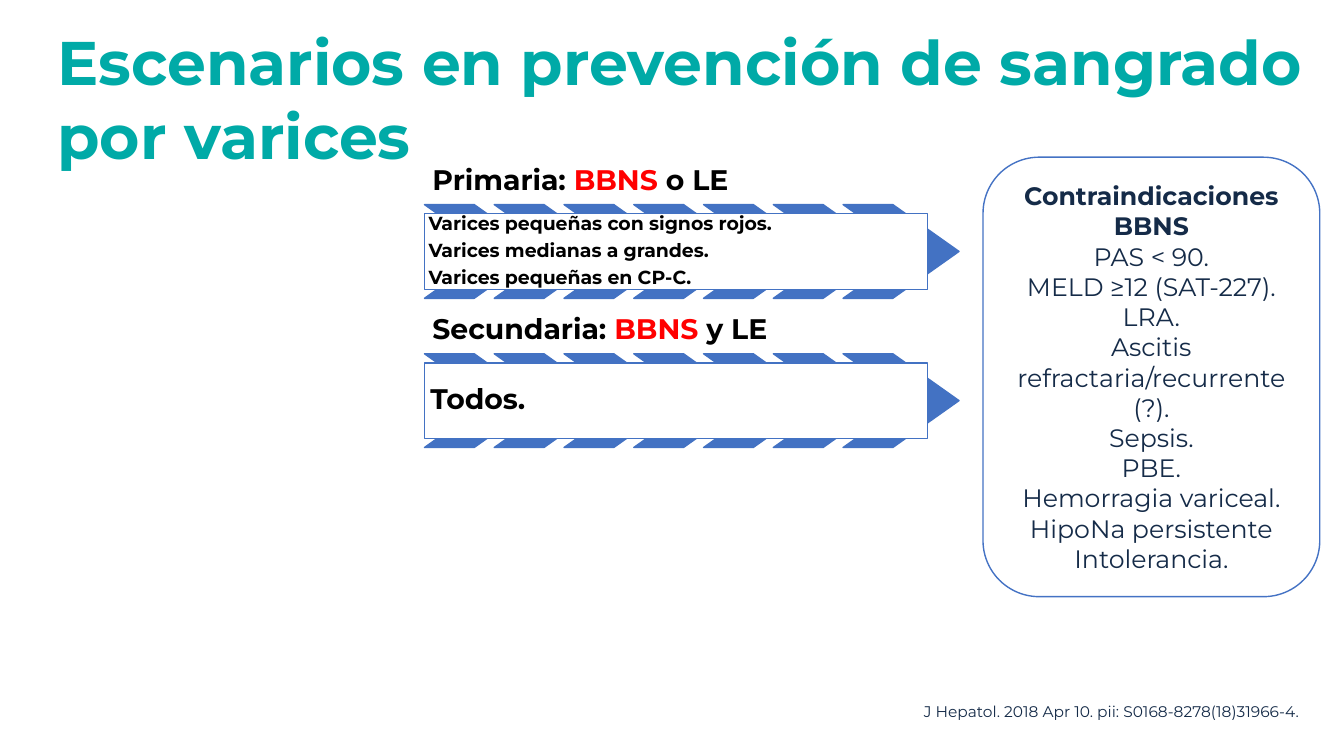
from pptx import Presentation
from pptx.dml.color import RGBColor
from pptx.enum.shapes import MSO_SHAPE
from pptx.enum.text import MSO_ANCHOR, PP_ALIGN
from pptx.util import Inches, Pt

COLORS = {"teal": "00AAA7", "navy": "152B48", "black": "000000", "red": "FF0000",
          "white": "FFFFFF", "arrow": "4372C3", "border": "4472C4"}
FONT = "Montserrat"


def color(name):
    return RGBColor.from_string(COLORS[name])


def write(shape, paras, size, ink="black", bold=False, align=PP_ALIGN.LEFT,
          anchor=MSO_ANCHOR.TOP, pad=(0.07, 0.04), lines=1.0, gap=0):
    """Fill a shape; each paragraph is a list of (text, overrides) runs."""
    frame = shape.text_frame
    frame.word_wrap = True
    frame.vertical_anchor = anchor
    frame.margin_left = frame.margin_right = Inches(pad[0])
    frame.margin_top = frame.margin_bottom = Inches(pad[1])
    for i, runs in enumerate(paras):
        para = frame.add_paragraph() if i else frame.paragraphs[0]
        para.alignment = align
        para.line_spacing = lines
        para.space_before = Pt(gap if i else 0)
        para.space_after = Pt(0)
        for text, style in runs:
            run = para.add_run()
            run.text = text
            run.font.name = FONT
            run.font.size = Pt(size)
            run.font.bold = style.get("bold", bold)
            run.font.color.rgb = color(style.get("ink", ink))


def plain(*texts):
    return [[(text, {})] for text in texts]


class Deck:
    def __init__(self):
        self.file = Presentation()
        self.file.slide_width = Inches(13.33)
        self.file.slide_height = Inches(7.5)
        self.slide = self.file.slides.add_slide(self.file.slide_layouts[5])

    def title(self, box, text):
        shape = self.slide.shapes.title
        shape.left, shape.top, shape.width, shape.height = map(Inches, box)
        write(shape, plain(text), 44, ink="teal", bold=True, pad=(0.1, 0.05))

    def text(self, box, paras, size, **style):
        shape = self.slide.shapes.add_textbox(*map(Inches, box))
        write(shape, paras, size, **style)

    def shape(self, kind, box, fill, line, adjust=None):
        shape = self.slide.shapes.add_shape(kind, *map(Inches, box))
        shape.shadow.inherit = False
        shape.fill.solid()
        shape.fill.fore_color.rgb = color(fill)
        shape.line.color.rgb = color(line)
        shape.line.width = Pt(1)
        if adjust is not None:
            shape.adjustments[0] = adjust
        return shape

    def arrow(self, top, head, paras, size, pad):
        """Heading above a band of chevrons with a text panel over it."""
        left, count, step = 4.21, 7, 0.692
        self.text((left, top, 4.93, 0.46), [head], 20.2, bold=True,
                  anchor=MSO_ANCHOR.BOTTOM, pad=(0.08, 0.08), lines=0.9)
        for i in range(count):
            self.shape(MSO_SHAPE.CHEVRON, (left + i * step, top + 0.46, 1.15, 0.93),
                       "arrow", "arrow", 0.706)
        panel = self.shape(MSO_SHAPE.RECTANGLE, (left, top + 0.55, 4.99, 0.75),
                           "white", "arrow")
        write(panel, paras, size, bold=True, anchor=MSO_ANCHOR.MIDDLE,
              pad=(pad, pad), lines=0.9, gap=4.7)


def main():
    deck = Deck()
    deck.title((0.47, 0.19, 12.78, 1.58),
               "Escenarios en prevención de sangrado por varices")
    drug = ("BBNS", {"ink": "red"})
    deck.arrow(1.57, [("Primaria: ", {}), drug, (" o LE", {})],
               plain("Varices pequeñas con signos rojos.",
                     "Varices medianas a grandes.",
                     "Varices pequeñas en CP-C."), 13.5, 0.04)
    deck.arrow(3.05, [("Secundaria: ", {}), drug, (" y LE", {})],
               plain("Todos."), 20.2, 0.06)

    card = deck.shape(MSO_SHAPE.ROUNDED_RECTANGLE, (9.75, 1.56, 3.34, 4.36),
                      "white", "border", 0.167)
    head = [("Contraindicaciones BBNS", {"bold": True})]
    items = plain("PAS < 90.", "MELD ≥12 (SAT-227).", "LRA.",
                  "Ascitis refractaria/recurrente (?).", "Sepsis.", "PBE.",
                  "Hemorragia variceal.", "HipoNa persistente", "Intolerancia.")
    write(card, [head] + items, 18, ink="navy", align=PP_ALIGN.CENTER,
          anchor=MSO_ANCHOR.MIDDLE)

    deck.text((8.82, 6.93, 4.14, 0.26),
              plain("J Hepatol. 2018 Apr 10. pii: S0168-8278(18)31966-4."),
              11, ink="navy", align=PP_ALIGN.RIGHT)
    deck.file.save("out.pptx")


if __name__ == "__main__":
    main()
